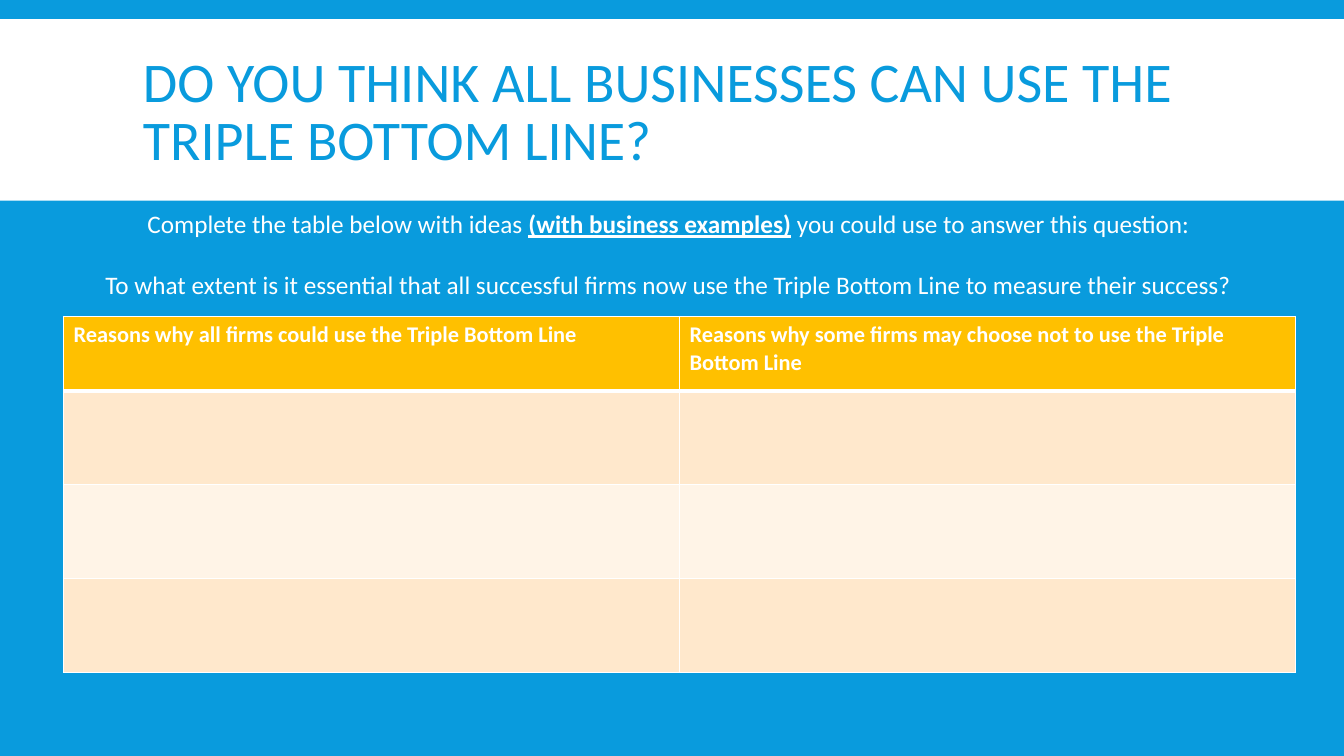
"""Builds the Triple Bottom Line discussion slide."""
from lxml.etree import SubElement
from pptx import Presentation
from pptx.dml.color import RGBColor as Rgb
from pptx.enum.shapes import MSO_SHAPE as Shape
from pptx.enum.text import MSO_ANCHOR as Anchor, PP_ALIGN as Align
from pptx.oxml.ns import qn
from pptx.util import Inches, Pt

HUES = {"blue": "099BDD", "white": "FFFFFF", "gold": "FFC000",
        "peach": "FFE8CC", "cream": "FFF4E7"}
WIDE, HIGH = Inches(13.33), Inches(7.5)


def paint(fill, hue):
    fill.solid()
    fill.fore_color.rgb = Rgb.from_string(HUES[hue])


def write(para, text, size, hue="white", bold=False, line=False):
    run = para.add_run()
    run.text = text
    font = run.font
    font.name, font.size, font.bold, font.underline = "Calibri", Pt(size), bold, line
    font.color.rgb = Rgb.from_string(HUES[hue])


deck = Presentation()
deck.slide_width, deck.slide_height = WIDE, HIGH
slide = deck.slides.add_slide(deck.slide_layouts[6])
paint(slide.background.fill, "blue")

band = slide.shapes.add_shape(Shape.RECTANGLE, 0, Inches(0.19), WIDE, Inches(1.8))
band.shadow.inherit = False
paint(band.fill, "white")
band.line.fill.background()

title = slide.shapes.add_textbox(Inches(1.32), Inches(0.31), Inches(10.7), Inches(1.65))
frame = title.text_frame
frame.word_wrap = True
frame.vertical_anchor = Anchor.MIDDLE
para = frame.paragraphs[0]
para.line_spacing = 0.85
write(para, "DO YOU THINK ALL BUSINESSES CAN USE THE TRIPLE BOTTOM LINE?", 40, "blue")

heads = ["Reasons why all firms could use the Triple Bottom Line",
         "Reasons why some firms may choose not to use the Triple Bottom Line"]
tints = ["gold", "peach", "cream", "peach"]
grid = slide.shapes.add_table(len(tints), len(heads), Inches(0.63), Inches(3.14),
                              Inches(12.22), Inches(3.53)).table
for row, tint in enumerate(tints):
    grid.rows[row].height = Inches(0.93 if row else 0.74)
    for col, head in enumerate(heads):
        cell = grid.cell(row, col)
        if row == 0:
            write(cell.text_frame.paragraphs[0], head, 16, bold=True)
        props = cell._tc.get_or_add_tcPr()
        for side in "LRTB":
            thick = 3 if (row, side) in [(0, "B"), (1, "T")] else 1
            edge = SubElement(props, qn(f"a:ln{side}"), w=str(Pt(thick)))
            tone = SubElement(edge, qn("a:solidFill"))
            SubElement(tone, qn("a:srgbClr"), val=HUES["white"])
        paint(cell.fill, tint)

task = slide.shapes.add_textbox(Inches(0.46), Inches(2.02), Inches(12.34), Inches(1.01))
frame = task.text_frame
frame.word_wrap = True
para = frame.paragraphs[0]
para.alignment = Align.CENTER
write(para, "Complete the table below with ideas ", 18)
write(para, "(with business examples)", 18, bold=True, line=True)
write(para, " you could use to answer this question:", 18)
para = frame.add_paragraph()
para.alignment = Align.CENTER
para.space_before = Pt(22)
write(para, "To what extent is it essential that all successful firms now use "
            "the Triple Bottom Line to measure their success?", 18)

deck.save("out.pptx")
